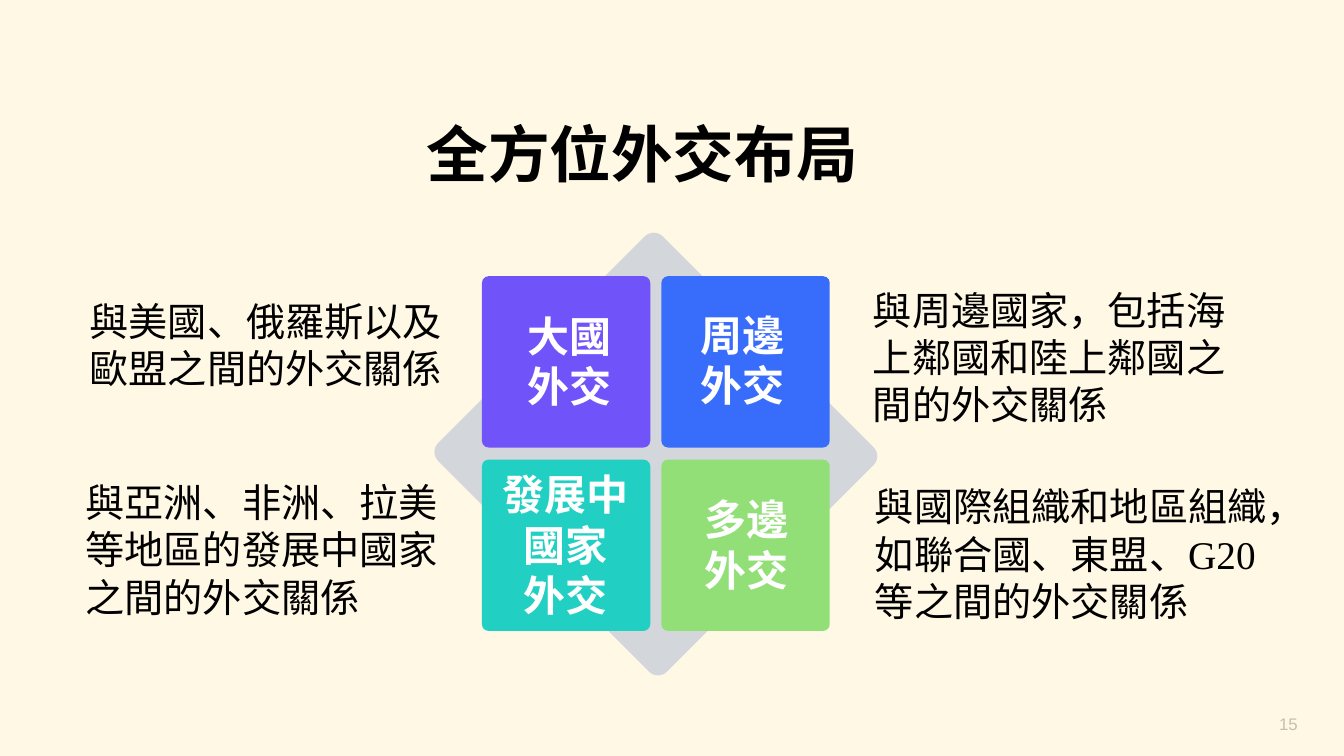
from lxml import etree
from pptx import Presentation
from pptx.dml.color import RGBColor
from pptx.enum.shapes import MSO_SHAPE
from pptx.enum.text import MSO_ANCHOR, PP_ALIGN
from pptx.oxml.ns import qn
from pptx.util import Inches, Pt

LEFT, CENTER, RIGHT = PP_ALIGN.LEFT, PP_ALIGN.CENTER, PP_ALIGN.RIGHT
TOP, MIDDLE = MSO_ANCHOR.TOP, MSO_ANCHOR.MIDDLE
RECTANGLE, ROUNDED = MSO_SHAPE.RECTANGLE, MSO_SHAPE.ROUNDED_RECTANGLE

BLACK = RGBColor(0x00, 0x00, 0x00)
WHITE = RGBColor(0xFF, 0xFF, 0xFF)
GRAY = RGBColor(0x8C, 0x8C, 0x8C)
CREAM = RGBColor(0xFF, 0xF2, 0xCC)
SILVER = RGBColor(0xD3, 0xD7, 0xDC)
PURPLE = RGBColor(0x71, 0x54, 0xF9)
BLUE = RGBColor(0x38, 0x6D, 0xFC)
TEAL = RGBColor(0x21, 0xD0, 0xC2)
GREEN = RGBColor(0x91, 0xDF, 0x76)

prs = Presentation()
prs.slide_width, prs.slide_height = Inches(13.33), Inches(7.5)
slide = prs.slides.add_slide(prs.slide_layouts[6])


def add_block(kind, box, color):
    block = slide.shapes.add_shape(kind, *map(Inches, box))
    block.shadow.inherit = False
    block.fill.solid()
    block.fill.fore_color.rgb = color
    block.line.fill.background()
    if kind == ROUNDED:
        block.adjustments[0] = 0.04
    return block


def add_text(box, lines, size, color, bold=False, align=LEFT, font="Calibri", anchor=TOP):
    frame = slide.shapes.add_textbox(*map(Inches, box)).text_frame
    frame.word_wrap = True
    frame.vertical_anchor = anchor
    frame.text = lines
    for paragraph in frame.paragraphs:
        paragraph.alignment = align
        paragraph.font.name = font
        paragraph.font.size = Pt(size)
        paragraph.font.bold = bold
        paragraph.font.color.rgb = color
    return frame


add_text((9.97, 6.98, 3, 0.4), "15", 12, GRAY, align=RIGHT, font="Arial", anchor=MIDDLE)

# Half-transparent cream veil over the whole slide
veil = add_block(RECTANGLE, (0, 0, 13.33, 7.5), CREAM)
veil_color = veil.fill._xPr.find(qn("a:solidFill"))[0]
etree.SubElement(veil_color, qn("a:alpha")).set("val", "50000")

add_text((3.99, 1.1, 4.76, 0.84), "全方位外交布局", 44, BLACK, bold=True, align=CENTER)

diamond = add_block(ROUNDED, (4.9, 2.93, 3.21, 3.15), SILVER)
diamond.rotation = 45

# Two-by-two grid of tiles, row by row
for index, tile_color in enumerate((PURPLE, BLUE, TEAL, GREEN)):
    row, column = divmod(index, 2)
    add_block(ROUNDED, (4.78 + 1.78 * column, 2.74 + 1.82 * row, 1.67, 1.7), tile_color)

tile_labels = [
    ((5.01, 3.03, 1.27, 1.11), "大國外交"),
    ((6.73, 3.02, 1.27, 1.11), "周邊外交"),
    ((4.88, 4.6, 1.46, 1.62), "發展中\n國家\n外交"),
    ((6.77, 4.85, 1.27, 1.11), "多邊外交"),
]
for box, label in tile_labels:
    add_text(box, label, 30, WHITE, bold=True, align=CENTER)

descriptions = [
    ((0.79, 2.9, 3.84, 1.04), "與美國、俄羅斯以及歐盟之間的外交關係"),
    ((8.56, 2.79, 3.94, 1.51), "與周邊國家，包括海上鄰國和陸上鄰國之間的外交關係"),
    ((0.75, 4.7, 3.84, 1.51), "與亞洲、非洲、拉美等地區的發展中國家之間的外交關係"),
]
for box, description in descriptions:
    add_text(box, description, 28, BLACK)

multilateral = add_text((8.58, 4.74, 4.1, 1.51), "與國際組織和地區組織，如聯合國、東盟、", 28, BLACK)
for text, font in (("G20", "Times New Roman"), ("等之間的外交關係", "Calibri")):
    run = multilateral.paragraphs[0].add_run()
    run.text = text
    run.font.name = font

prs.save("out.pptx")
